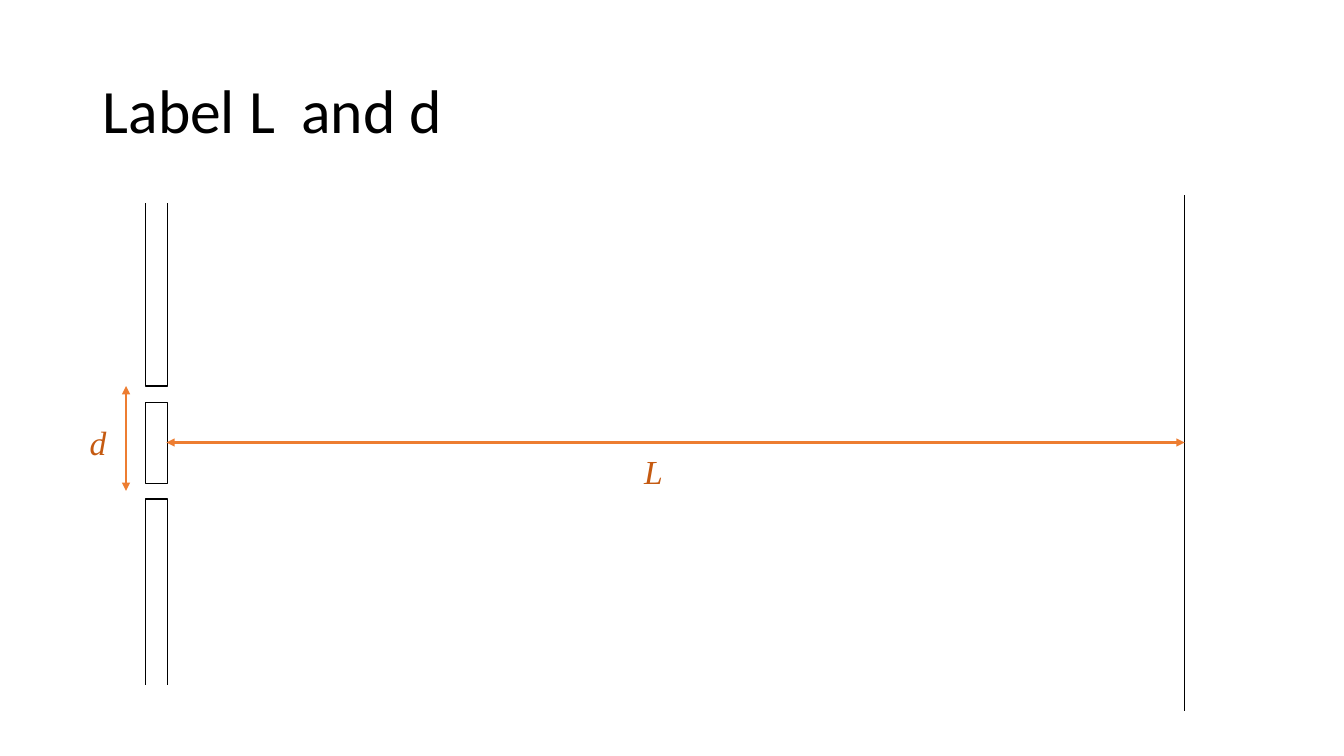
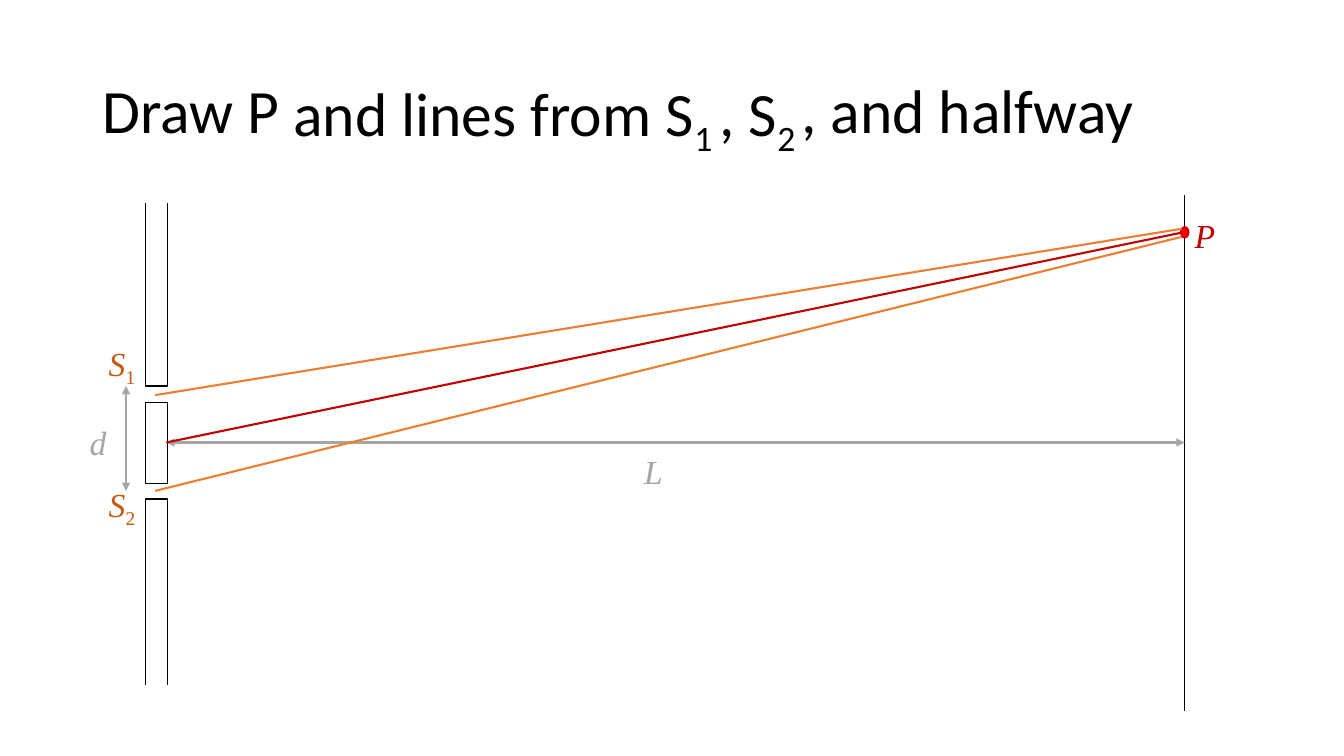
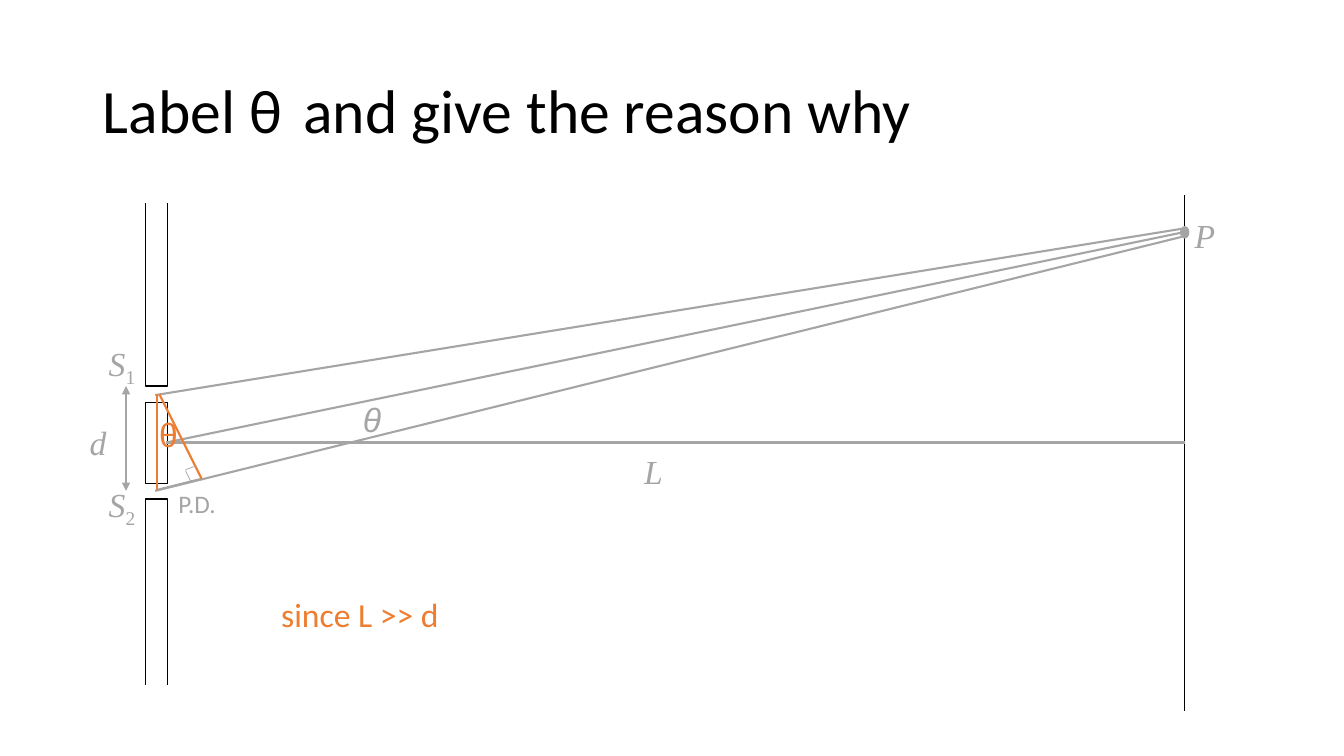
from dataclasses import dataclass

from lxml.etree import SubElement
from pptx import Presentation
from pptx.dml.color import RGBColor
from pptx.enum.shapes import MSO_CONNECTOR, MSO_SHAPE
from pptx.enum.text import MSO_ANCHOR
from pptx.oxml.ns import qn
from pptx.util import Inches, Pt


@dataclass(frozen=True)
class Theme:
    black: str = "000000"
    white: str = "FFFFFF"
    grey: str = "A5A5A5"
    orange: str = "ED7D31"
    rust: str = "C55A11"
    crimson: str = "C00000"
    red: str = "FF0000"
    body: str = "Calibri"
    symbol: str = "Times New Roman"
    greek: str = "Arial"
    title_size: int = 44
    label_size: int = 24
    note_size: int = 18
    thin: float = 0.5
    outline: float = 1
    ray: float = 1.5


THEME = Theme()

SLIT_1, SLIT_2 = (1.54, 3.92), (1.54, 4.87)
MIDPOINT = (1.65, 4.39)
SCREEN_X = 11.75


class Diagram:
    def __init__(self, deck, theme):
        self.deck = deck
        self.theme = theme
        self.slide = None

    def start(self, *titles):
        self.slide = self.deck.slides.add_slide(self.deck.slide_layouts[6])
        for left, width, words, subscript in titles:
            self.title(left, width, words, subscript)
        self.apparatus()

    def text(self, box, words, subscript="", color=None, anchor=MSO_ANCHOR.TOP,
             spacing=1.0, **style):
        frame = self.slide.shapes.add_textbox(*map(Inches, box)).text_frame
        for name, value in {"word_wrap": True, "vertical_anchor": anchor}.items():
            setattr(frame, name, value)
        paragraph = frame.paragraphs[0]
        paragraph.line_spacing = spacing
        for part, lowered in ((words, False), (subscript, True)):
            if not part:
                continue
            run = paragraph.add_run()
            run.text = part
            for name, value in style.items():
                setattr(run.font, name, value)
            run.font.color.rgb = RGBColor.from_string(color)
            if lowered:
                run.font.italic = False
                run._r.get_or_add_rPr().set("baseline", "-25000")

    def title(self, left, width, words, subscript=""):
        self.text((left, 0.4, width, 1.45), words, subscript, self.theme.black,
                  MSO_ANCHOR.MIDDLE, 0.9,
                  name=self.theme.body, size=Pt(self.theme.title_size))

    def label(self, left, top, width, words, color, subscript="", **changes):
        style = {"name": self.theme.symbol, "size": Pt(self.theme.label_size),
                 "italic": True}
        self.text((left, top, width, 0.5), words, subscript, color,
                  **{**style, **changes})

    def shape(self, kind, box, fill, line):
        figure = self.slide.shapes.add_shape(kind, *map(Inches, box))
        figure.shadow.inherit = False
        figure.fill.solid()
        figure.fill.fore_color.rgb = RGBColor.from_string(fill)
        figure.line.color.rgb = RGBColor.from_string(line)
        figure.line.width = Pt(self.theme.outline)

    def line(self, start, end, color, width=None, arrows=False):
        stroke = self.slide.shapes.add_connector(
            MSO_CONNECTOR.STRAIGHT, *map(Inches, (*start, *end)))
        stroke.line.color.rgb = RGBColor.from_string(color)
        stroke.line.width = Pt(width or self.theme.ray)
        if arrows:
            outline = stroke.line._get_or_add_ln()
            for tag in ("a:headEnd", "a:tailEnd"):
                SubElement(outline, qn(tag), type="triangle")
        SubElement(stroke._element.spPr, qn("a:effectLst"))

    def apparatus(self):
        t = self.theme
        for top, height in ((2, 1.83), (4.95, 1.87), (3.99, 0.81)):
            self.shape(MSO_SHAPE.RECTANGLE, (1.44, top, 0.22, height),
                       t.white, t.black)
        for top in (1.84, 6.8):
            self.shape(MSO_SHAPE.RECTANGLE, (1.37, top, 0.34, 0.17),
                       t.white, t.white)
        self.line((SCREEN_X, 7.05), (SCREEN_X, 1.93), t.black, t.outline)

    def distances(self, line_color, label_color, axis_arrows=True):
        self.line((1.25, 3.83), (1.25, 4.87), line_color, arrows=True)
        self.label(0.79, 4.14, 0.28, "d", label_color)
        self.line(MIDPOINT, (SCREEN_X, MIDPOINT[1]), line_color,
                  arrows=axis_arrows)
        self.label(6.29, 4.42, 0.28, "L", label_color)

    def rays(self, dot, point, outer, sources):
        self.shape(MSO_SHAPE.OVAL, (11.71, 2.25, 0.08, 0.11), dot, point)
        self.label(SCREEN_X, 2.08, 0.51, "P", point)
        for number, top in (("1", 3.35), ("2", 4.75)):
            self.label(0.98, top, 0.58, "S", sources, number)
        self.line(SLIT_2, (11.72, 2.35), outer)
        self.line(SLIT_1, (11.72, 2.27), outer)
        self.line(MIDPOINT, (11.71, 2.31), point)

    def path_difference(self):
        t = self.theme
        upper, lower, foot = (1.56, 3.91), (1.56, 4.86), (2, 4.75)
        self.label(3.5, 3.91, 0.47, "θ", t.grey, name=t.greek)
        self.line(lower, foot, t.grey)
        self.label(1.67, 4.8, 0.7, "P.D.", t.grey, name=t.body,
                   size=Pt(t.note_size), italic=False)
        self.line((1.58, 3.91), foot, t.orange)
        for start, end in (((1.84, 4.67), (1.89, 4.77)),
                           ((1.95, 4.62), (1.84, 4.66))):
            self.line(start, end, t.grey, t.thin)
        self.line(lower, upper, t.orange)
        self.label(1.48, 4.06, 0.47, "θ", t.orange, name=t.greek, italic=False)
        self.label(2.69, 5.84, 2.34, "since L >> d", t.orange, name=t.body,
                   italic=False)


def main():
    deck = Presentation()
    deck.slide_width, deck.slide_height = Inches(13.33), Inches(7.5)
    diagram = Diagram(deck, THEME)

    diagram.start((0.92, 2.2, "Label L", ""), (2.89, 1.8, "and d", ""))
    diagram.distances(THEME.orange, THEME.rust)

    diagram.start((0.92, 2.2, "Draw P", ""),
                  (2.81, 4.51, "and lines from S", "1"),
                  (7.04, 1, ", S", "2"),
                  (7.85, 3.74, ", and halfway", ""))
    diagram.distances(THEME.grey, THEME.grey)
    diagram.rays(THEME.red, THEME.crimson, THEME.orange, THEME.rust)

    diagram.start((0.92, 2.29, "Label θ", ""),
                  (2.91, 6.62, "and give the reason why", ""))
    diagram.distances(THEME.grey, THEME.grey, axis_arrows=False)
    diagram.rays(THEME.grey, THEME.grey, THEME.grey, THEME.grey)
    diagram.path_difference()

    deck.save("out.pptx")


if __name__ == "__main__":
    main()
